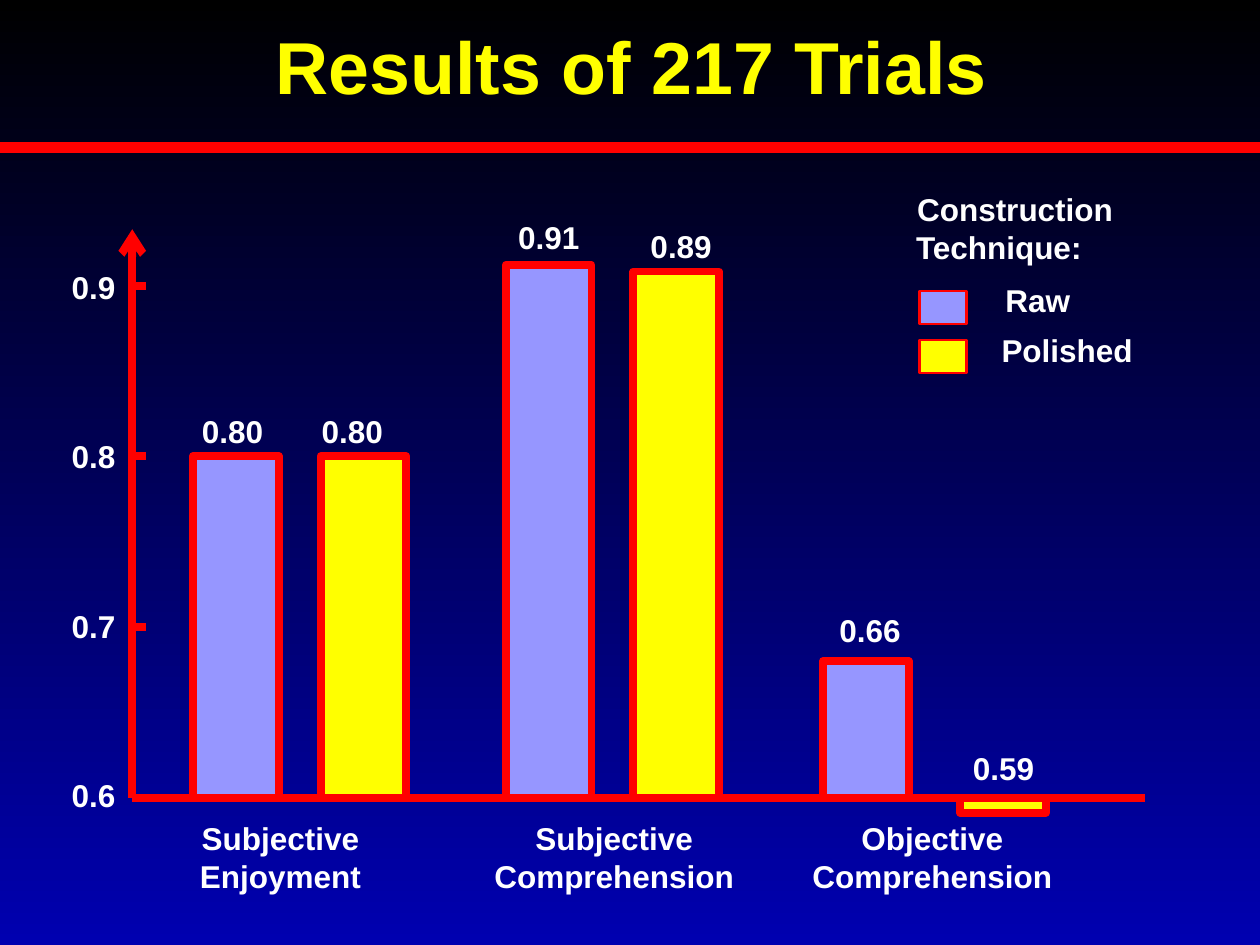
import pptx
import pptx.dml.color
import pptx.enum.shapes
import pptx.enum.text
import pptx.oxml.ns
import pptx.util
from lxml import etree

Pt = pptx.util.Pt
RGBColor = pptx.dml.color.RGBColor
ALIGN = pptx.enum.text.PP_ALIGN
ANCHOR = pptx.enum.text.MSO_ANCHOR
AUTO_SIZE = pptx.enum.text.MSO_AUTO_SIZE
SHAPE = pptx.enum.shapes.MSO_SHAPE
CONNECTOR = pptx.enum.shapes.MSO_CONNECTOR
qn = pptx.oxml.ns.qn

BLACK = RGBColor(0x00, 0x00, 0x00)
NAVY = RGBColor(0x00, 0x00, 0xB0)
RED = RGBColor(0xFF, 0x00, 0x00)
YELLOW = RGBColor(0xFF, 0xFF, 0x00)
LILAC = RGBColor(0x96, 0x96, 0xFF)
WHITE = RGBColor(0xFF, 0xFF, 0xFF)

AXIS_X, AXIS_TOP, AXIS_END = 75.6, 131, 654.5
BASELINE = 456
TICK_STEP = 97.6
BAR_WIDTH = 49
LABEL_HEIGHT = 28.8


class SlideBuilder:
    font = "Arial"
    text_size = 18
    stroke = 4.5

    def __init__(self, slide):
        self.slide = slide
        self.shapes = slide.shapes

    def background(self, top_color, bottom_color):
        fill = self.slide.background.fill
        fill.gradient()
        fill.gradient_angle = 270
        for stop, position, color in zip(fill.gradient_stops, (0, 1), (top_color, bottom_color)):
            stop.position = position
            stop.color.rgb = color

    def group(self):
        """Put the elements that follow into a new group."""
        self.shapes = self.slide.shapes.add_group_shape().shapes

    def ungroup(self):
        self.shapes = self.slide.shapes

    def text(self, words, left, top, width, height=LABEL_HEIGHT, aligns=(ALIGN.CENTER,),
             size=text_size, color=WHITE, wrap=False, anchor=ANCHOR.TOP, fit=True):
        box = self.shapes.add_textbox(Pt(left), Pt(top), Pt(width), Pt(height))
        frame = box.text_frame
        frame.text = words
        frame.word_wrap = wrap
        frame.vertical_anchor = anchor
        frame.auto_size = AUTO_SIZE.SHAPE_TO_FIT_TEXT if fit else AUTO_SIZE.NONE
        for index, paragraph in enumerate(frame.paragraphs):
            paragraph.alignment = aligns[min(index, len(aligns) - 1)]
            for run in paragraph.runs:
                run.font.name = self.font
                run.font.size = Pt(size)
                run.font.bold = True
                run.font.color.rgb = color

    def rectangle(self, left, top, width, height, color, stroke=stroke):
        shape = self.shapes.add_shape(SHAPE.RECTANGLE, Pt(left), Pt(top), Pt(width), Pt(height))
        shape.shadow.inherit = False
        shape.fill.solid()
        shape.fill.fore_color.rgb = color
        shape.line.color.rgb = RED
        shape.line.width = Pt(stroke)

    def line(self, x1, y1, x2, y2, stroke=stroke, arrow=False):
        connector = self.shapes.add_connector(CONNECTOR.STRAIGHT, Pt(x1), Pt(y1), Pt(x2), Pt(y2))
        connector.line.color.rgb = RED
        connector.line.width = Pt(stroke)
        properties = connector._element.spPr
        if arrow:
            etree.SubElement(properties.find(qn("a:ln")), qn("a:tailEnd"), type="arrow")
        etree.SubElement(properties, qn("a:effectLst"))


def main():
    deck = pptx.Presentation()
    deck.slide_width, deck.slide_height = Pt(720), Pt(540)
    builder = SlideBuilder(deck.slides.add_slide(deck.slide_layouts[6]))
    builder.background(BLACK, NAVY)

    # Title and rule
    builder.text("Results of 217 Trials", 9.4, 6.5, 702.7, 61.2, size=42, color=YELLOW,
                 wrap=True, anchor=ANCHOR.MIDDLE, fit=False)
    builder.line(0, 84.2, 720, 84.2, stroke=6)

    # Axes
    builder.line(AXIS_X, BASELINE, AXIS_END, BASELINE)
    builder.line(AXIS_X, BASELINE, AXIS_X, AXIS_TOP, arrow=True)
    for step, tick_label in enumerate(("0.6", "0.7", "0.8", "0.9")):
        tick_y = BASELINE - step * TICK_STEP
        if step:
            builder.line(AXIS_X, tick_y, AXIS_X + 8, tick_y)
        builder.text(tick_label, 33.8, 440 - step * 96.8, 39.6, aligns=(ALIGN.LEFT,))

    # Category names: words, left, width, wrap
    categories = (
        ("Subjective\nEnjoyment", 106.6, 107.3, False),
        ("Subjective\nComprehension", 270.7, 160.6, True),
        ("Objective\nComprehension", 453.6, 158.4, True),
    )
    for name, left, width, wrap in categories:
        builder.text(name, left, 464.4, width, 51, wrap=wrap)

    # Bars: value, bar left, top, bottom, label left, label top, label width
    pairs = (
        (("0.80", 110.2, 260.6, BASELINE, 106.6, 231.8, 52.6),
         ("0.80", 183.2, 260.6, BASELINE, 172.8, 231.8, 56.9)),
        (("0.91", 289, 151.4, BASELINE, 288.7, 121, 49.7),
         ("0.89", 361.9, 155.2, BASELINE, 362.2, 126.4, 54)),
        (("0.66", 470.3, 377.8, BASELINE, 472.3, 345.8, 49.7),
         ("0.59", 548.6, BASELINE, 464.4, 537.1, 424.4, 72.7)),
    )
    for pair in pairs:
        builder.group()
        for bar, color in zip(pair, (LILAC, YELLOW)):
            value, left, top, bottom, label_left, label_top, label_width = bar
            builder.rectangle(left, top, BAR_WIDTH, bottom - top, color)
            builder.text(value, label_left, label_top, label_width, wrap=True)
    builder.ungroup()

    # Legend
    builder.text("Construction\nTechnique:", 516.4, 105.3, 127.4, 51,
                 aligns=(ALIGN.CENTER, ALIGN.LEFT))
    legend = (("Raw", LILAC, 567.4, 51.8), ("Polished", YELLOW, 565.2, 90))
    for row, (technique, color, left, width) in enumerate(legend):
        builder.rectangle(525.6, 166.4 + row * 28, 26.6, 18.7, color, stroke=1.5)
        builder.text(technique, left, 157 + row * 28.4, width, aligns=(ALIGN.LEFT,))

    deck.save("out.pptx")


if __name__ == "__main__":
    main()
